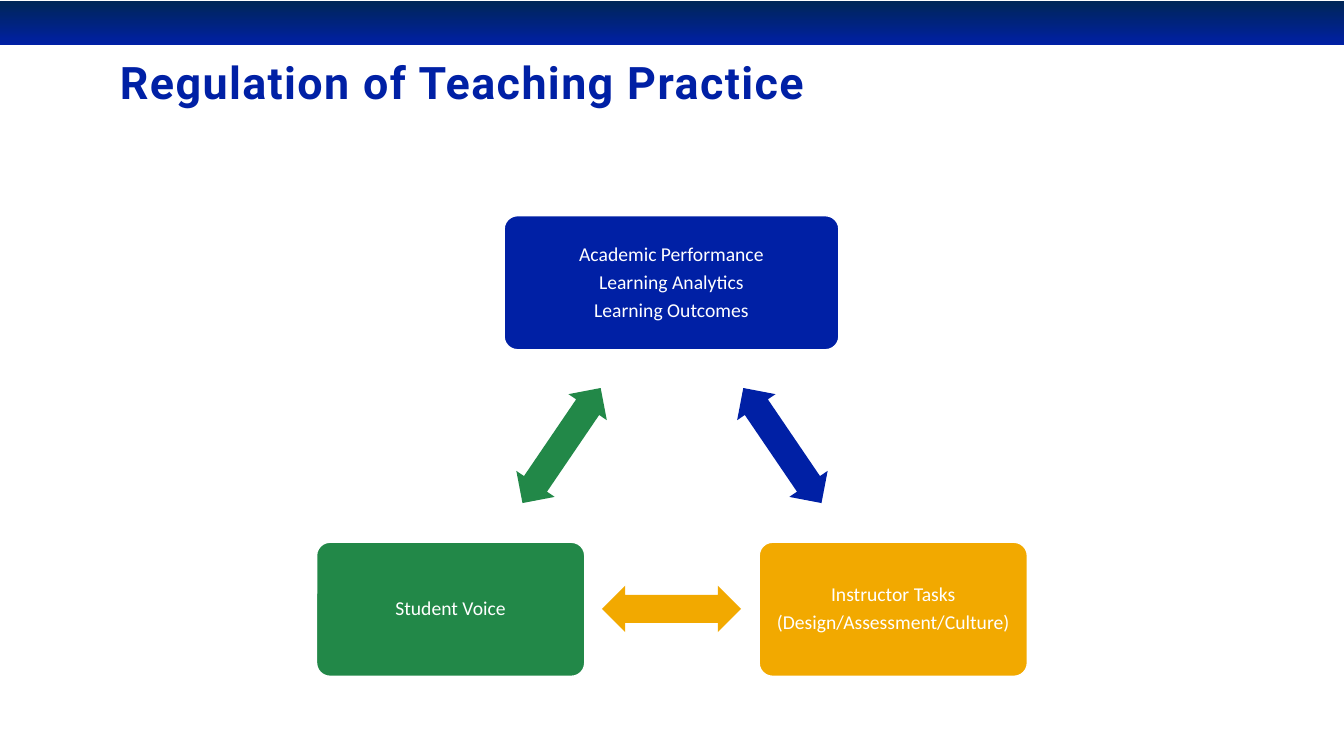
from pptx import Presentation
from pptx.dml.color import RGBColor
from pptx.enum.shapes import MSO_SHAPE as Shape
from pptx.enum.text import MSO_ANCHOR as Anchor, MSO_AUTO_SIZE as AutoSize, PP_ALIGN as Align
from pptx.util import Inches, Pt

COLORS = {"navy": "002657", "blue": "0020A5", "gold": "F2A900",
          "green": "228848", "white": "FFFFFF"}


def rgb(name):
    return RGBColor.from_string(COLORS[name])


def add_plain_shape(kind, left, top, width, height):
    """Add a preset shape without shadow or outline."""
    shape = slide.shapes.add_shape(
        kind, Inches(left), Inches(top), Inches(width), Inches(height))
    shape.shadow.inherit = False
    shape.line.fill.background()
    return shape


prs = Presentation()
prs.slide_width, prs.slide_height = Inches(13.33), Inches(7.5)
slide = prs.slides.add_slide(prs.slide_layouts[5])

# Header band
band = add_plain_shape(Shape.RECTANGLE, 0, 0.01, 13.33, 0.44)
band.fill.gradient()
band.fill.gradient_angle = 270
for stop, color in zip(band.fill.gradient_stops, ("navy", "blue")):
    stop.color.rgb = rgb(color)

# Title
title = slide.shapes.title
title.left, title.top = Inches(1.19), Inches(0.29)
title.width, title.height = Inches(11.86), Inches(0.79)
title_frame = title.text_frame
title_frame.text = "Regulation of Teaching Practice"
title_format = {"margin_left": 0, "margin_right": 0, "margin_top": 0, "margin_bottom": 0,
                "vertical_anchor": Anchor.BOTTOM, "auto_size": AutoSize.NONE}
for key, value in title_format.items():
    setattr(title_frame, key, value)
heading = title_frame.paragraphs[0]
heading.alignment, heading.line_spacing = Align.LEFT, 0.9
heading_run = heading.runs[0]
for key, value in {"name": "Roboto", "size": Pt(32), "bold": True}.items():
    setattr(heading_run.font, key, value)
heading_run.font.color.rgb = rgb("blue")
heading_run._r.get_or_add_rPr().set("spc", "100")

# Cycle boxes: left, top, width, colour, lines
BOX_HEIGHT = 1.33
boxes = [
    (5, 2.14, 3.32, "blue", ["Academic Performance", "Learning Analytics", "Learning Outcomes"]),
    (7.53, 5.38, 2.66, "gold", ["Instructor Tasks", "(Design/Assessment/Culture)"]),
    (3.14, 5.38, 2.66, "green", ["Student Voice"]),
]
box_format = {"margin_left": Inches(0.1), "margin_right": Inches(0.1),
              "margin_top": Inches(0.1), "margin_bottom": Inches(0.1),
              "vertical_anchor": Anchor.MIDDLE, "word_wrap": True}
line_format = {"alignment": Align.CENTER, "line_spacing": 0.9, "space_after": Pt(4.9)}
for left, top, width, color, lines in boxes:
    box = add_plain_shape(Shape.ROUNDED_RECTANGLE, left, top, width, BOX_HEIGHT)
    box.adjustments[0] = 0.1
    box.fill.solid()
    box.fill.fore_color.rgb = rgb(color)
    box.line.color.rgb = rgb("white")
    box.line.width = Pt(1)
    frame = box.text_frame
    for key, value in box_format.items():
        setattr(frame, key, value)
    frame.text = "\n".join(lines)
    for paragraph in frame.paragraphs:
        for key, value in line_format.items():
            setattr(paragraph, key, value)
        font = paragraph.runs[0].font
        font.name, font.size = "Calibri", Pt(14)
        font.color.rgb = rgb("white")

# Two-way arrows between the boxes: left, top, rotation, colour
arrows = [
    (7.07, 4.19, 55.8, "blue"),
    (5.97, 5.81, 180, "gold"),
    (4.88, 4.19, 304.2, "green"),
]
for left, top, rotation, color in arrows:
    arrow = add_plain_shape(Shape.LEFT_RIGHT_ARROW, left, top, 1.38, 0.46)
    arrow.adjustments[0], arrow.adjustments[1] = 0.6, 0.5
    arrow.rotation = rotation
    arrow.fill.solid()
    arrow.fill.fore_color.rgb = rgb(color)

prs.save("out.pptx")
